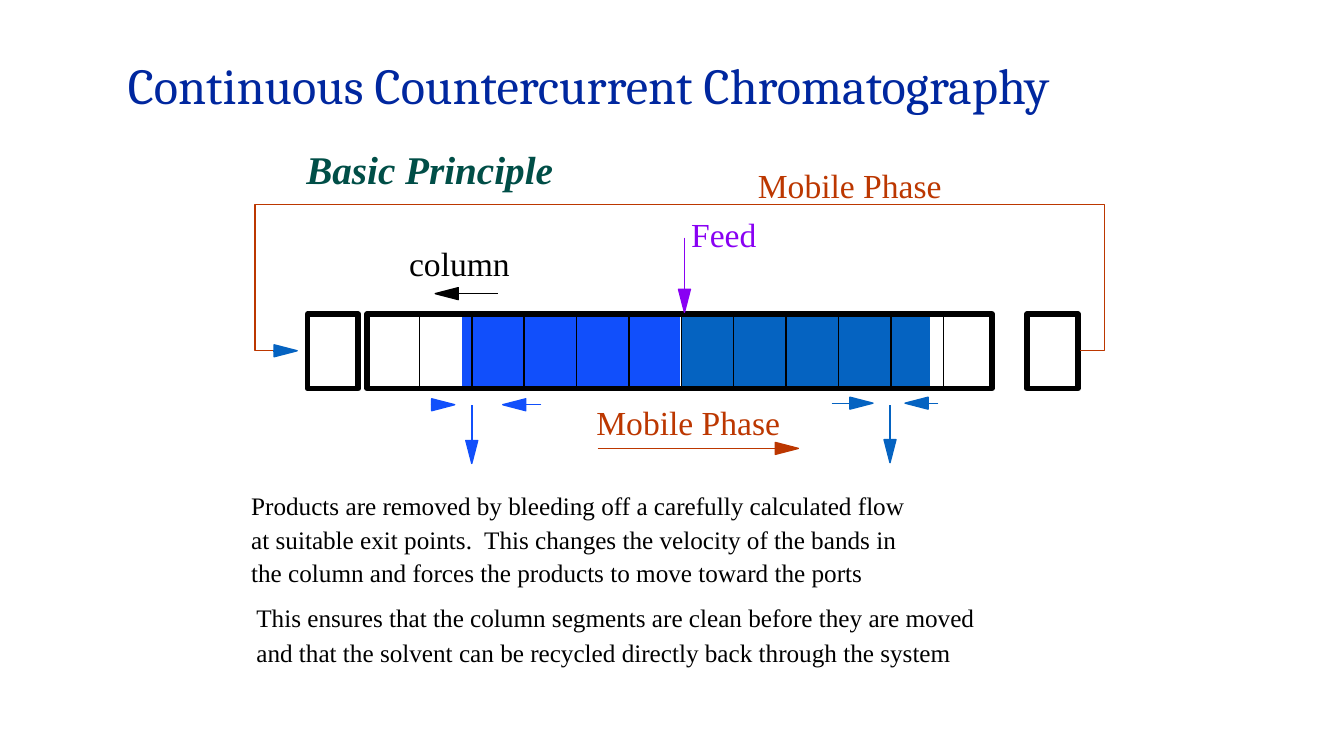
from math import hypot

from lxml import etree
from pptx import Presentation
from pptx.dml.color import RGBColor
from pptx.enum.shapes import MSO_CONNECTOR, MSO_SHAPE
from pptx.enum.text import MSO_ANCHOR, MSO_AUTO_SIZE, PP_ALIGN
from pptx.oxml.ns import qn
from pptx.util import Cm, Pt

RECTANGLE = MSO_SHAPE.RECTANGLE
STRAIGHT = MSO_CONNECTOR.STRAIGHT
TOP = MSO_ANCHOR.TOP
FIXED = MSO_AUTO_SIZE.NONE
LEFT = PP_ALIGN.LEFT

BLACK = RGBColor(0x00, 0x00, 0x00)
NAVY = RGBColor(0x00, 0x27, 0x9F)
GREEN = RGBColor(0x00, 0x4E, 0x47)
RUST = RGBColor(0xBC, 0x37, 0x00)
VIOLET = RGBColor(0x89, 0x01, 0xF3)
BRIGHT_BLUE = RGBColor(0x11, 0x4F, 0xFB)
DEEP_BLUE = RGBColor(0x05, 0x63, 0xC1)

COLUMN_LEFT, COLUMN_TOP = 9.25, 7.92
COLUMN_HEIGHT = 1.87
SEGMENT_WIDTH = 1.32
DIVIDERS = 11

BANDS = [(11.66, 5.46, BRIGHT_BLUE), (17.2, 6.22, DEEP_BLUE)]
FRAMES = [(COLUMN_LEFT, 15.75), (7.75, 1.28), (25.88, 1.29)]
RETURN_LOOP = [(27.23, 8.84), (27.84, 8.84), (27.84, 5.16),
               (6.43, 5.16), (6.43, 8.84), (6.91, 8.84)]
ARROWS = [
    ((12.55, 7.4), (10.97, 7.4), BLACK),
    ((17.25, 5.99), (17.25, 7.87), VIOLET),
    ((15.06, 11.3), (20.12, 11.3), RUST),
    ((13.64, 10.2), (12.67, 10.2), BRIGHT_BLUE),
    ((10.85, 10.2), (11.46, 10.2), BRIGHT_BLUE),
    ((11.89, 10.21), (11.89, 11.68), BRIGHT_BLUE),
    ((20.96, 10.16), (22, 10.16), DEEP_BLUE),
    ((23.65, 10.16), (22.81, 10.16), DEEP_BLUE),
    ((22.43, 10.21), (22.43, 11.66), DEEP_BLUE),
    ((6.89, 8.84), (7.49, 8.84), DEEP_BLUE),
]
LABELS = [
    ("Mobile Phase", 18.85, 4.14, 5.2, RUST),
    ("Mobile Phase", 14.78, 10.11, 5.2, RUST),
    ("Feed", 17.17, 5.38, 2.2, VIOLET),
    ("column", 10.06, 6.1, 3.1, BLACK),
]
NOTES = [
    ("Products are removed by bleeding off a carefully calculated flow", 0, 24, 0),
    ("at suitable exit points.  This changes the velocity of the bands in", 0, 24, 0),
    ("the column and forces the products to move toward the ports", 0, 24, 0),
    ("This ensures that the column segments are clean before they are moved", 0.13, 25, 7),
    ("and that the solvent can be recycled directly back through the system", 0.13, 25, 0),
]


class Sketch:
    """Draws styled elements, measured in centimetres, on the current slide."""

    font = "Times New Roman"
    thin, thick = Pt(1), Pt(4)
    head_length, head_half = 0.58, 0.15

    def __init__(self, slide):
        self.slide = slide
        self.shapes = slide.shapes

    def paint(self, shape, fill, line, width):
        shape.shadow.inherit = False
        if fill is None:
            shape.fill.background()
        else:
            shape.fill.solid()
            shape.fill.fore_color.rgb = fill
        shape.line.color.rgb = line
        shape.line.width = width

    def segment(self, left, width, fill, line, weight):
        box = self.shapes.add_shape(RECTANGLE, Cm(left), Cm(COLUMN_TOP),
                                    Cm(width), Cm(COLUMN_HEIGHT))
        self.paint(box, fill, line, weight)

    def outline(self, points, fill, line, close):
        corners = [(Cm(x), Cm(y)) for x, y in points]
        builder = self.shapes.build_freeform(*corners[0])
        builder.add_line_segments(corners[1:], close=close)
        self.paint(builder.convert_to_shape(), fill, line, self.thin)

    def line(self, start, end, color):
        connector = self.shapes.add_connector(STRAIGHT, *map(Cm, start + end))
        connector.line.color.rgb = color
        connector.line.width = self.thin
        etree.SubElement(connector._element.spPr, qn("a:effectLst"))

    def arrow(self, tail, tip, color):
        length = hypot(tip[0] - tail[0], tip[1] - tail[1])
        along_x, along_y = (tip[0] - tail[0]) / length, (tip[1] - tail[1]) / length
        neck = (tip[0] - self.head_length * along_x, tip[1] - self.head_length * along_y)
        wing_x, wing_y = self.head_half * along_y, self.head_half * along_x
        self.line(tail, neck, color)
        self.outline([tip, (neck[0] - wing_x, neck[1] + wing_y),
                      (neck[0] + wing_x, neck[1] - wing_y)], color, color, True)

    def place(self, box, left, top, width, height):
        box.left, box.top, box.width, box.height = map(Cm, (left, top, width, height))
        frame = box.text_frame
        frame.word_wrap = True
        frame.auto_size = FIXED
        frame.vertical_anchor = TOP
        frame.margin_left = frame.margin_right = Cm(0.25)
        frame.margin_top = frame.margin_bottom = Cm(0.13)

    def style(self, para, size, color, spacing=0.9, font=font):
        para.alignment = LEFT
        para.line_spacing = spacing
        para.space_before = Pt(0)
        for span in para.runs:
            span.font.name = font
            span.font.size = Pt(size)
            span.font.color.rgb = color

    def title(self, text):
        box = self.shapes.title
        self.place(box, 2.97, 1.4, 27.41, 1.68)
        box.text_frame.text = text
        self.style(box.text_frame.paragraphs[0], 36, NAVY, font="Cambria")

    def label(self, text, left, top, width, color, size=24):
        box = self.shapes.add_textbox(0, 0, 0, 0)
        self.place(box, left, top, width, 1.17)
        box.text_frame.text = text
        para = box.text_frame.paragraphs[0]
        self.style(para, size, color)
        return para.runs[0]

    def notes(self, lines):
        box = self.slide.placeholders[1]
        self.place(box, 6.08, 12.14, 20, 5)
        box.text_frame.text = "\n".join(line[0] for line in lines)
        for para, (_, indent, pitch, gap) in zip(box.text_frame.paragraphs, lines):
            self.style(para, 18, BLACK, Pt(pitch))
            para.space_before = Pt(gap)
            properties = para._p.get_or_add_pPr()
            properties.set("marL", str(Cm(indent)))
            properties.set("indent", "0")
            etree.SubElement(properties, qn("a:buNone"))


def main():
    deck = Presentation()
    deck.slide_width, deck.slide_height = Cm(33.87), Cm(19.05)
    sketch = Sketch(deck.slides.add_slide(deck.slide_layouts[1]))

    sketch.title("Continuous Countercurrent Chromatography")
    sketch.notes(NOTES)
    for left, width, color in BANDS:
        sketch.segment(left, width, color, color, sketch.thin)
    for left, width in FRAMES:
        sketch.segment(left, width, None, BLACK, sketch.thick)
    for number in range(1, DIVIDERS + 1):
        x = COLUMN_LEFT + number * SEGMENT_WIDTH
        sketch.line((x, COLUMN_TOP), (x, COLUMN_TOP + COLUMN_HEIGHT), BLACK)
    sketch.outline(RETURN_LOOP, None, RUST, False)
    for tail, tip, color in ARROWS:
        sketch.arrow(tail, tip, color)
    for label in LABELS:
        sketch.label(*label)
    heading = sketch.label("Basic Principle", 7.47, 3.66, 6.8, GREEN, 28)
    heading.font.bold = heading.font.italic = True
    deck.save("out.pptx")


if __name__ == "__main__":
    main()
